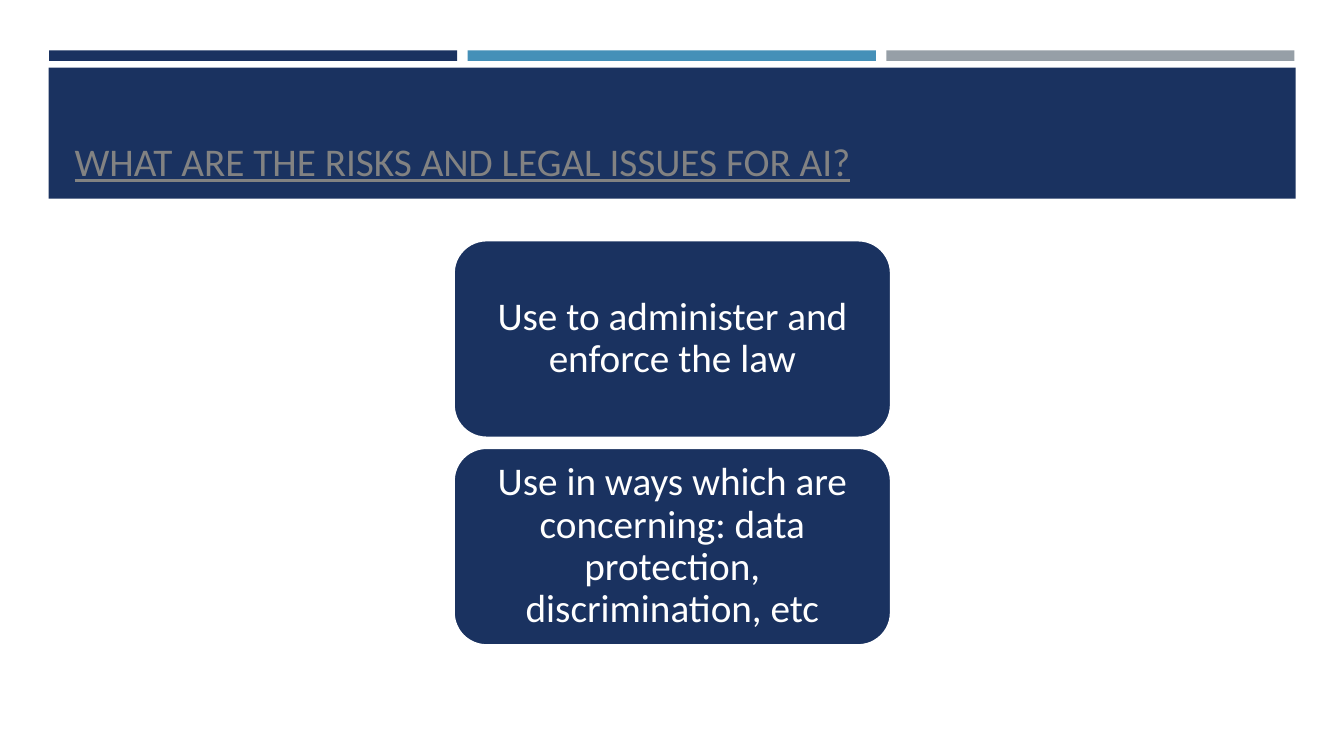
from pptx import Presentation, util as u
from pptx.dml.color import RGBColor
from pptx.enum import shapes, text

NAVY = RGBColor(0x1A, 0x32, 0x60)
BLUE = RGBColor(0x45, 0x90, 0xB8)
SILVER = RGBColor(0x96, 0x9F, 0xA7)
GREY = RGBColor(0x82, 0x82, 0x82)
WHITE = RGBColor(0xFF, 0xFF, 0xFF)

COLUMNS, ROWS = 80, 45


class Deck:
    """Style and current slide; lengths are columns and rows of an 80 x 45 grid."""

    font, size = "Calibri", u.Pt(28)

    def __init__(self):
        self.prs = Presentation()
        self.prs.slide_width, self.prs.slide_height = u.Inches(13.33), u.Inches(7.5)
        self.s = self.prs.slides.add_slide(self.prs.slide_layouts[5])

    def place(self, left, top, width, height):
        col = self.prs.slide_width / COLUMNS
        row = self.prs.slide_height / ROWS
        return [round(n) for n in (left * col, top * row, width * col, height * row)]

    def add_words(self, tf, words, color, align, anchor):
        tf.word_wrap = True
        tf.auto_size = text.MSO_AUTO_SIZE.NONE
        tf.vertical_anchor = anchor
        p = tf.paragraphs[0]
        p.alignment = align
        r = p.add_run()
        r.text = words
        r.font.name, r.font.size = self.font, self.size
        r.font.color.rgb = color
        return p, r

    def block(self, kind, at, fill):
        sp = self.s.shapes.add_shape(kind, *self.place(*at))
        sp.shadow.inherit = False
        sp.fill.solid()
        sp.fill.fore_color.rgb = fill
        sp.line.fill.background()
        return sp

    def bar(self, at, fill):
        self.block(shapes.MSO_SHAPE.RECTANGLE, at, fill)

    def title(self, at, words):
        """Fill the title placeholder and bring it in front of the band."""
        sp = self.s.shapes.title
        sp.left, sp.top, sp.width, sp.height = self.place(*at)
        _, r = self.add_words(sp.text_frame, words, GREY,
                              text.PP_ALIGN.LEFT, text.MSO_ANCHOR.BOTTOM)
        r.font.underline = True
        sp.element.getparent().append(sp.element)

    def card(self, at, words):
        sp = self.block(shapes.MSO_SHAPE.ROUNDED_RECTANGLE, at, NAVY)
        sp.line.color.rgb, sp.line.width = WHITE, u.Pt(1.75)
        tf = sp.text_frame
        tf.margin_left = tf.margin_right = u.Inches(0.12)
        tf.margin_top = tf.margin_bottom = u.Inches(0.06)
        p, _ = self.add_words(tf, words, WHITE,
                              text.PP_ALIGN.CENTER, text.MSO_ANCHOR.MIDDLE)
        p.line_spacing = 0.9


def main():
    deck = Deck()
    for i, color in enumerate((NAVY, BLUE, SILVER)):
        deck.bar((2.92 + 24.92 * i, 3, 24.3, 0.63), color)
    deck.bar((2.9, 4.02, 74.22, 7.8), NAVY)
    deck.title((3.84, 4.62, 72.36, 6.66), "WHAT ARE THE RISKS AND LEGAL ISSUES FOR AI?")

    risks = ("Use to administer and enforce the law",
             "Use in ways which are concerning: data protection, discrimination, etc")
    for i, risk in enumerate(risks):
        deck.card((27, 14.3 + 12.36 * i, 26.04, 11.76), risk)
    deck.prs.save("out.pptx")


if __name__ == "__main__":
    main()
